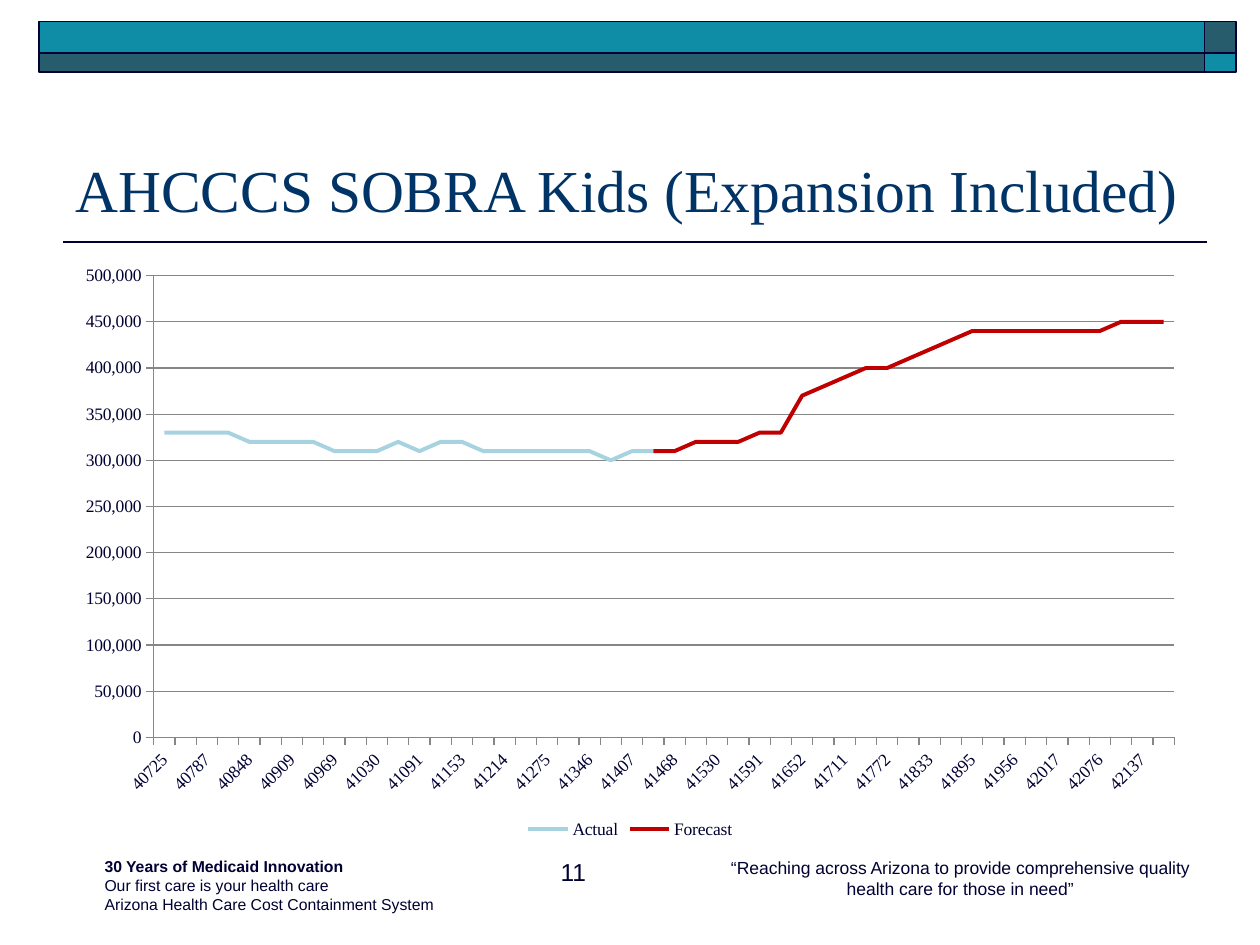
import pptx
import pptx.chart.data
import pptx.dml.color
import pptx.enum.chart
import pptx.enum.shapes
import pptx.enum.text
import pptx.oxml
import pptx.oxml.ns
import pptx.util
from pptx.util import Inches

COLORS = {"ink": "000033", "title": "003366", "teal": "108DA6", "slate": "275C6D",
          "actual": "A7D2DF", "forecast": "C00000", "grid": "868686"}
ALIGN = pptx.enum.text.PP_ALIGN

DATES = [40725, 40756, 40787, 40817, 40848, 40878, 40909, 40940, 40969, 41000, 41030, 41061,
         41091, 41122, 41153, 41194, 41214, 41244, 41275, 41318, 41346, 41377, 41407, 41438,
         41468, 41499, 41530, 41560, 41591, 41621, 41652, 41683, 41711, 41742, 41772, 41803,
         41833, 41864, 41895, 41925, 41956, 41986, 42017, 42048, 42076, 42107, 42137, 42168]
# Enrolment in tens of thousands; the forecast starts at the last actual month.
ACTUAL = [33, 33, 33, 33, 32, 32, 32, 32, 31, 31, 31, 32,
          31, 32, 32, 31, 31, 31, 31, 31, 31, 30, 31, 31]
FORECAST = [31, 31, 32, 32, 32, 33, 33, 37, 38, 39, 40, 40, 41,
            42, 43, 44, 44, 44, 44, 44, 44, 44, 45, 45, 45]


def rgb(name):
    return pptx.dml.color.RGBColor.from_string(COLORS[name])


def format_font(font, size, name="Arial", color="ink", bold=False):
    font.size = pptx.util.Pt(size)
    font.name = name
    font.bold = bold
    font.color.rgb = rgb(color)


def format_line(line, color, width):
    line.color.rgb = rgb(color)
    line.width = pptx.util.Pt(width)


def add_bar(slide, left, top, width, height, fill):
    sp = slide.shapes.add_shape(pptx.enum.shapes.MSO_SHAPE.RECTANGLE, Inches(left),
                                Inches(top), Inches(width), Inches(height))
    sp.shadow.inherit = False
    sp.fill.solid()
    sp.fill.fore_color.rgb = rgb(fill)
    format_line(sp.line, "ink", 1)


def add_header(slide):
    """Two rows of bars, with the colours swapped in the end cells."""
    for top, height, wide, end in ((0.17, 0.25, "teal", "slate"), (0.42, 0.15, "slate", "teal")):
        add_bar(slide, 0.31, top, 9.25, height, wide)
        add_bar(slide, 9.56, top, 0.25, height, end)


def add_rule(slide):
    line = slide.shapes.add_connector(pptx.enum.shapes.MSO_CONNECTOR.STRAIGHT,
                                      Inches(9.58), Inches(1.92), Inches(0.5), Inches(1.92))
    format_line(line.line, "ink", 1)
    line._element.spPr.append(pptx.oxml.parse_xml(
        f'<a:effectLst {pptx.oxml.ns.nsdecls("a")}/>'))


def set_title(slide, text):
    title = slide.shapes.title
    title.left, title.top = Inches(0.5), Inches(0.58)
    title.width, title.height = Inches(9), Inches(1.25)
    tf = title.text_frame
    tf.text = text
    tf.vertical_anchor = pptx.enum.text.MSO_ANCHOR.BOTTOM
    p = tf.paragraphs[0]
    p.alignment = ALIGN.LEFT
    format_font(p.runs[0].font, 34, "Times New Roman", "title")


def add_text(slide, text, left, width, height, size, align=ALIGN.LEFT, inset=0.1,
             bold_first=False):
    """Footer text, one paragraph for each line of text."""
    box = slide.shapes.add_textbox(Inches(left), Inches(6.75), Inches(width), Inches(height))
    tf = box.text_frame
    tf.word_wrap = True
    tf.margin_left = Inches(inset)
    for i, content in enumerate(text.split("\n")):
        p = tf.paragraphs[0] if i == 0 else tf.add_paragraph()
        p.alignment = align
        r = p.add_run()
        r.text = content
        format_font(r.font, size, bold=bold_first and i == 0)


def set_plot_layout(chart, **fractions):
    """Fix the inner plot area as fractions of the chart frame."""
    plot_area = chart._chartSpace.chart.plotArea
    for old in plot_area.findall(pptx.oxml.ns.qn("c:layout")):
        plot_area.remove(old)
    sizes = "".join(f'<c:{key} val="{value}"/>' for key, value in fractions.items())
    plot_area.insert(0, pptx.oxml.parse_xml(
        f'<c:layout {pptx.oxml.ns.nsdecls("c")}><c:manualLayout><c:layoutTarget val="inner"/>'
        f'<c:xMode val="edge"/><c:yMode val="edge"/>{sizes}</c:manualLayout></c:layout>'))


def format_axes(chart):
    for axis in (chart.category_axis, chart.value_axis):
        axis.major_tick_mark = pptx.enum.chart.XL_TICK_MARK.OUTSIDE
        axis.minor_tick_mark = pptx.enum.chart.XL_TICK_MARK.NONE
        format_line(axis.format.line, "grid", 0.75)

    values = chart.value_axis
    values.minimum_scale, values.maximum_scale, values.major_unit = 0, 500000, 50000
    values.tick_labels.number_format = "#,##0"
    values.tick_labels.number_format_is_linked = False
    values.has_major_gridlines = True
    format_line(values.major_gridlines.format.line, "grid", 0.75)

    dates = chart.category_axis
    format_font(dates.tick_labels.font, 10, "Times New Roman")
    dates._element.txPr.bodyPr.set("rot", "-2700000")
    no_multi = dates._element.find(pptx.oxml.ns.qn("c:noMultiLvlLbl"))
    no_multi.addprevious(pptx.oxml.parse_xml(
        f'<c:tickLblSkip {pptx.oxml.ns.nsdecls("c")} val="2"/>'))


def add_enrolment_chart(slide):
    data = pptx.chart.data.CategoryChartData(number_format="#,##0")
    data.categories = [str(d) for d in DATES]
    for name, values, start in (("Actual", ACTUAL, 0), ("Forecast", FORECAST, len(ACTUAL) - 1)):
        after = len(DATES) - start - len(values)
        data.add_series(name, [None] * start + [v * 10000 for v in values] + [None] * after)
    chart = slide.shapes.add_chart(pptx.enum.chart.XL_CHART_TYPE.LINE, Inches(0.5), Inches(2),
                                   Inches(9), Inches(4.7), data).chart
    chart.has_title = False
    format_font(chart.font, 10, "Times New Roman")
    chart.has_legend = True
    chart.legend.position = pptx.enum.chart.XL_LEGEND_POSITION.BOTTOM
    chart.legend.include_in_layout = False
    chart.plots[0].vary_by_categories = False
    for series, color in zip(chart.plots[0].series, ("actual", "forecast")):
        series.smooth = False
        series.marker.style = pptx.enum.chart.XL_MARKER_STYLE.NONE
        format_line(series.format.line, color, 2.25)
    format_axes(chart)
    set_plot_layout(chart, x=0.08, y=0.04, w=0.9, h=0.78)


def main():
    prs = pptx.Presentation()
    prs.slide_width, prs.slide_height = Inches(10), Inches(7.5)
    slide = prs.slides.add_slide(prs.slide_layouts[5])
    add_rule(slide)
    add_header(slide)
    set_title(slide, "AHCCCS SOBRA Kids (Expansion Included)")
    add_text(slide, "“Reaching across Arizona to provide comprehensive quality "
             "health care for those in need”", 5.58, 4.08, 0.43, 10, align=ALIGN.CENTER)
    add_text(slide, "30 Years of Medicaid Innovation\nOur first care is your health care\n"
             "Arizona Health Care Cost Containment System", 0.25, 9.33, 0.52, 9,
             inset=0.58, bold_first=True)
    add_text(slide, "11", 2.42, 2.33, 0.52, 14, align=ALIGN.RIGHT)
    add_enrolment_chart(slide)
    prs.save("out.pptx")


if __name__ == "__main__":
    main()
